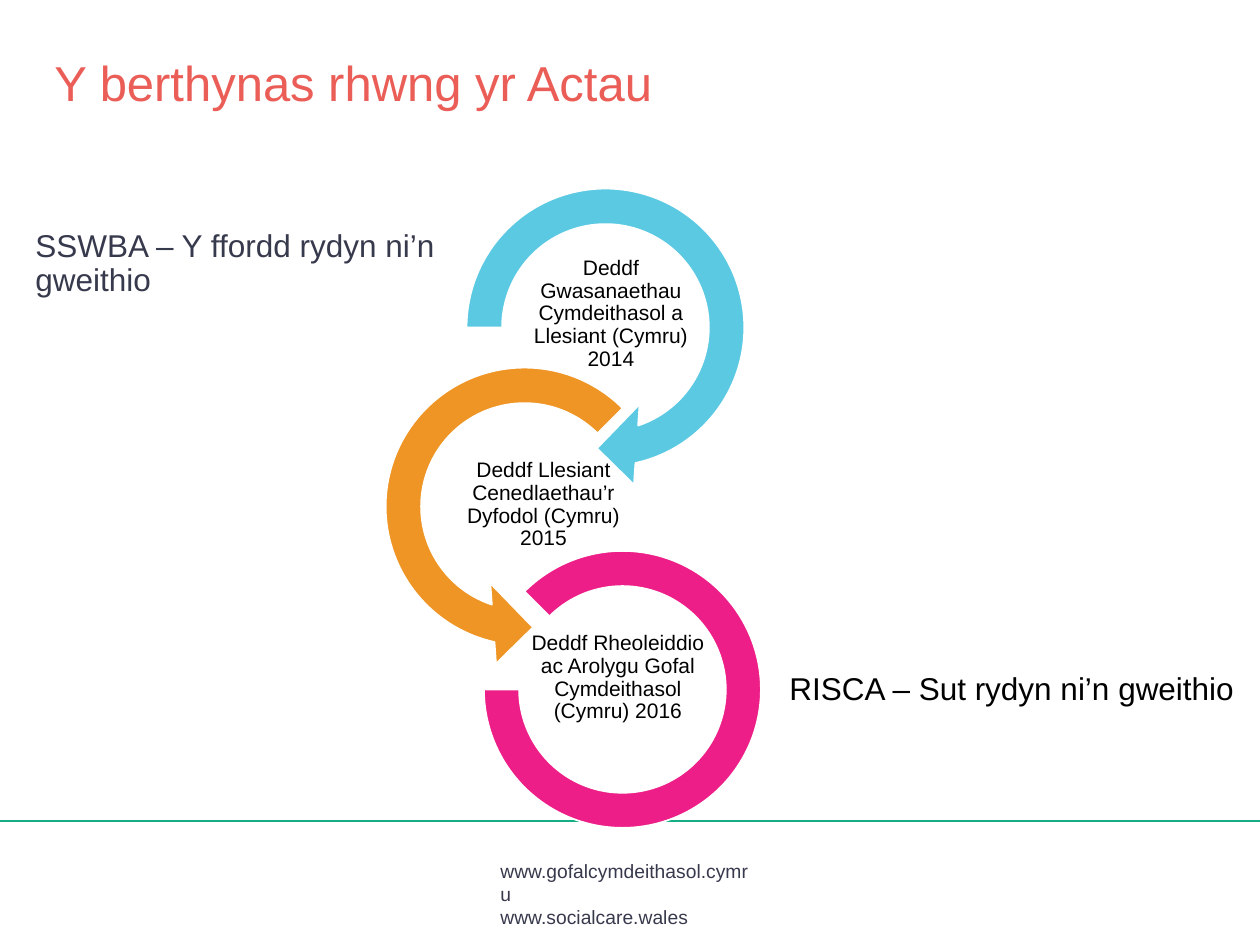
from pptx import Presentation
from pptx.dml.color import RGBColor
from pptx.enum.shapes import MSO_CONNECTOR, MSO_SHAPE
from pptx.enum.text import MSO_ANCHOR, PP_ALIGN
from pptx.oxml.ns import qn
from pptx.util import Emu, Pt
from lxml.etree import SubElement

TITLE = ("Y berthynas rhwng yr Actau", (42, 53, 1139, 142), 28, "EB5E57", 0.9)
WAY = ("SSWBA – Y ffordd rydyn ni’n gweithio", (23, 224, 430, 84), 18, "37394C", 0.9)
HOW = ("RISCA – Sut rydyn ni’n gweithio", (777, 663, 631, 50), 18, "000000", 1)
FOOTER = ("www.gofalcymdeithasol.cymru\nwww.socialcare.wales",
          (488, 853, 282, 58), 11, "37394C", 1)

ACTS = [
    ("Deddf Gwasanaethau Cymdeithasol a Llesiant (Cymru) 2014", (509, 267, 204, 94),
     MSO_SHAPE.CIRCULAR_ARROW, (444, 166, 323), "5CC9E3", (0.11, 11.42, 45, 108, 0.125)),
    ("Deddf Llesiant Cenedlaethau’r Dyfodol (Cymru) 2015", (452, 454, 183, 102),
     MSO_SHAPE.LEFT_CIRCULAR_ARROW, (363, 345, 323), "EF9526", (0.11, 11.42, 63, 189, 0.125)),
    ("Deddf Rheoleiddio ac Arolygu Gofal Cymdeithasol (Cymru) 2016", (530, 622, 176, 112),
     MSO_SHAPE.BLOCK_ARC, (484, 551, 277), "ED1E87", (135, 108, 0.127)),
]


def px(n):
    return Emu(round(n * 914400 / 126))


def rgb(value):
    return RGBColor.from_string(value)


def add_text(s, text, box, size, color, spacing):
    tf = s.shapes.add_textbox(*map(px, box)).text_frame
    tf.word_wrap = True
    tf.text = text
    for p in tf.paragraphs:
        p.line_spacing = spacing
        for r in p.runs:
            r.font.name = "Arial"
            r.font.size = Pt(size)
            r.font.color.rgb = rgb(color)
    return tf


def add_act(s, text, box, kind, ring, color, adjustments):
    x, y, side = map(px, ring)
    sp = s.shapes.add_shape(kind, x, y, side, side)
    sp.shadow.inherit = False
    for i, value in enumerate(adjustments):
        sp.adjustments[i] = value
    sp.fill.solid()
    sp.fill.fore_color.rgb = rgb(color)
    sp.line.color.rgb = rgb("FFFFFF")
    sp.line.width = Pt(1)

    tf = add_text(s, text, box, 12, "000000", 0.9)
    tf.vertical_anchor = MSO_ANCHOR.MIDDLE
    tf.margin_left = tf.margin_right = tf.margin_top = tf.margin_bottom = px(1)
    p = tf.paragraphs[0]
    p.alignment = PP_ALIGN.CENTER
    p.space_after = Pt(3)


def add_rule(s, y, color):
    line = s.shapes.add_connector(MSO_CONNECTOR.STRAIGHT, 0, px(y), px(1260), px(y))
    line.line.color.rgb = rgb(color)
    line.line.width = Pt(1)
    SubElement(line._element.spPr, qn("a:effectLst"))


def main():
    """Build the slide on how the three Acts relate."""
    prs = Presentation()
    prs.slide_width, prs.slide_height = px(1260), px(945)
    s = prs.slides.add_slide(prs.slide_layouts[6])
    add_text(s, *FOOTER)
    add_rule(s, 821, "16AD85")
    add_text(s, *TITLE)
    add_text(s, *WAY)
    for act in ACTS:
        add_act(s, *act)
    add_text(s, *HOW)
    prs.save("out.pptx")


if __name__ == "__main__":
    main()
